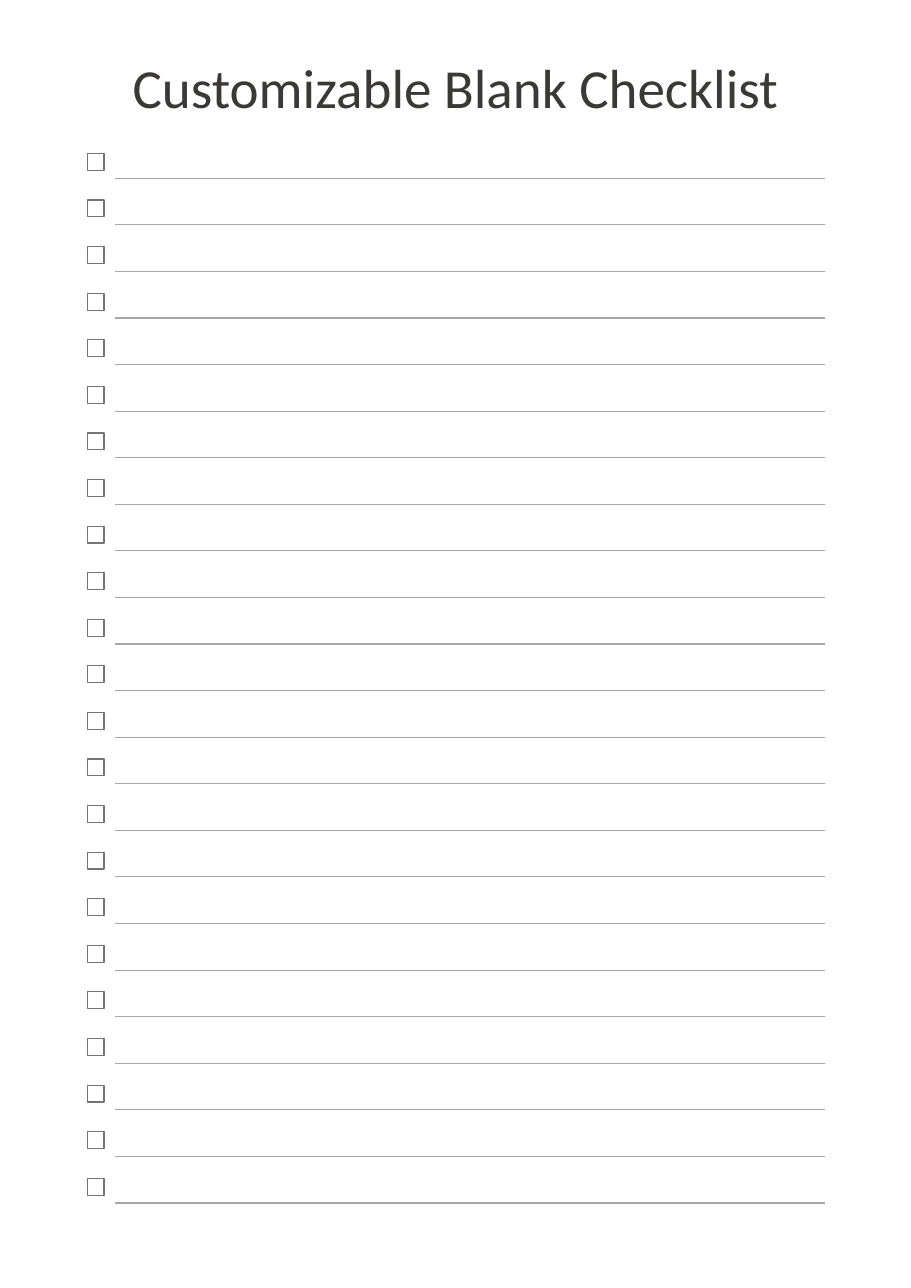
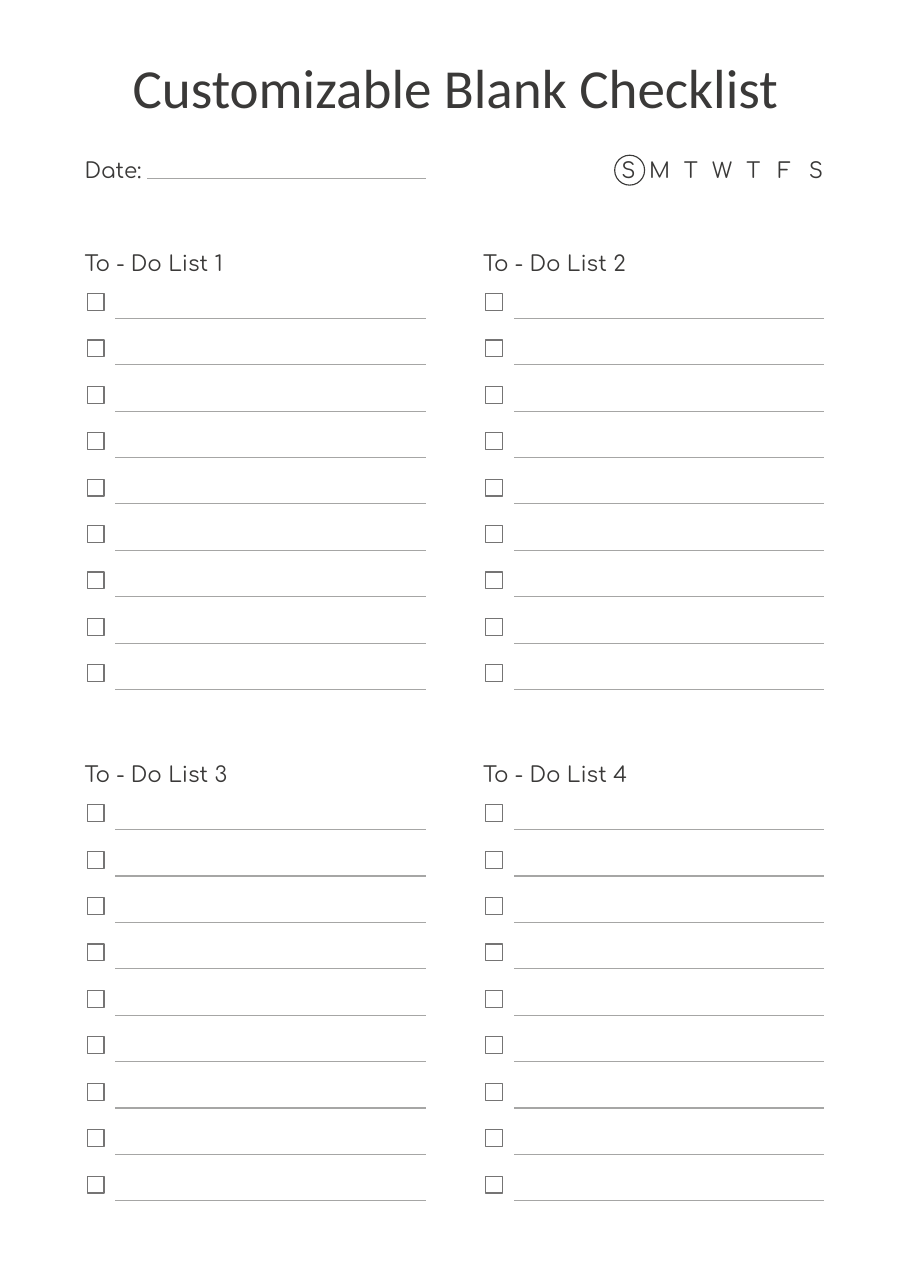
from lxml.etree import SubElement
from pptx import Presentation
from pptx.dml.color import RGBColor
from pptx.enum.shapes import MSO_CONNECTOR as Link, MSO_SHAPE as Form
from pptx.enum.text import MSO_AUTO_SIZE as AutoSize, PP_ALIGN as Align
from pptx.oxml.ns import qn
from pptx.util import Cm, Pt

TITLE = "Customizable Blank Checklist"
DATE_LABEL = "Date:"
WEEKDAYS = ["S", "M", "T", "W", "T", "F", "S"]
TODO_LISTS = [
    ["To - Do List 1", "To - Do List 2"],
    ["To - Do List 3", "To - Do List 4"],
]

COLORS = {"ink": "3A3938", "rule": "A6A6A5", "box": "757474"}
TITLE_STYLE = {"font": "Calibri", "size": 36, "align": Align.CENTER}
LABEL_STYLE = {"font": "Comfortaa", "size": 14, "align": Align.LEFT}
DAY_STYLE = {**LABEL_STYLE, "align": Align.CENTER}

LEFT = 1.95
HEADER_RULE, LABEL_TOP, LABEL_HEIGHT = 4.11, 3.63, 0.61
BOX_SIZE, BOX_INDENT, BOX_RISE, RULE_INDENT = 0.39, 0.06, 0.57, 0.71
PAGE_ROWS, PAGE_LAST_RULE, PAGE_WIDTH = 23, 27.74, 17.07
LIST_ROWS, LIST_PITCH, LIST_WIDTH = 9, 1.07, 7.86
LIST_TOP, COLUMN_STEP, BAND_STEP, FIRST_RULE_DROP = 5.77, 9.19, 11.79, 1.57
DATE_RULE_LEFT = 3.4
DAYS_LEFT, DAY_WIDTH = 14.13, 0.72
MARK_LEFT, MARK_TOP, MARK_SIZE = 14.17, 3.58, 0.69


def add_text(shapes, text, left, top, width, height, style):
    box = shapes.add_textbox(Cm(left), Cm(top), Cm(width), Cm(height))
    frame = box.text_frame
    frame.word_wrap = True
    frame.auto_size = AutoSize.SHAPE_TO_FIT_TEXT
    frame.margin_left = frame.margin_right = frame.margin_top = frame.margin_bottom = 0
    paragraph = frame.paragraphs[0]
    paragraph.alignment = style["align"]
    run = paragraph.add_run()
    run.text = text
    run.font.name = style["font"]
    run.font.size = Pt(style["size"])
    run.font.color.rgb = RGBColor.from_string(COLORS["ink"])


def set_line(line, color):
    line.color.rgb = RGBColor.from_string(COLORS[color])
    line.width = Pt(0.75)


def add_outline(shapes, form, left, top, size, color):
    outline = shapes.add_shape(form, Cm(left), Cm(top), Cm(size), Cm(size))
    outline.shadow.inherit = False
    outline.fill.background()
    set_line(outline.line, color)


def add_rule(shapes, left, right, y):
    rule = shapes.add_connector(Link.STRAIGHT, Cm(left), Cm(y), Cm(right), Cm(y))
    set_line(rule.line, "rule")
    SubElement(rule._element.spPr, qn("a:effectLst"))


def add_rows(shapes, left, width, first_rule, pitch, count):
    for row in range(count):
        y = first_rule + row * pitch
        add_rule(shapes, left + RULE_INDENT, left + width, y)
        add_outline(shapes, Form.RECTANGLE, left + BOX_INDENT, y - BOX_RISE, BOX_SIZE, "box")


def add_page(deck):
    shapes = deck.slides.add_slide(deck.slide_layouts[6]).shapes
    add_text(shapes, TITLE, 1.86, 1.23, 17.28, 1.55, TITLE_STYLE)
    return shapes


def build_single_list(deck):
    rows = add_page(deck).add_group_shape().shapes
    pitch = (PAGE_LAST_RULE - HEADER_RULE) / (PAGE_ROWS - 1)
    add_rows(rows, LEFT, PAGE_WIDTH, HEADER_RULE, pitch, PAGE_ROWS)


def build_four_lists(deck):
    page = add_page(deck)
    add_outline(page, Form.OVAL, MARK_LEFT, MARK_TOP, MARK_SIZE, "ink")

    date = page.add_group_shape().shapes
    add_text(date, DATE_LABEL, LEFT, LABEL_TOP, 1.47, LABEL_HEIGHT, LABEL_STYLE)
    add_rule(date, DATE_RULE_LEFT, LEFT + LIST_WIDTH, HEADER_RULE)

    week = page.add_group_shape().shapes
    for index, day in enumerate(WEEKDAYS):
        add_text(week, day, DAYS_LEFT + index * DAY_WIDTH, LABEL_TOP,
                 DAY_WIDTH, LABEL_HEIGHT, DAY_STYLE)

    for band, headings in enumerate(TODO_LISTS):
        top = LIST_TOP + band * BAND_STEP
        for column, heading in enumerate(headings):
            left = LEFT + column * COLUMN_STEP
            todo = page.add_group_shape().shapes
            add_text(todo, heading, left, top, LIST_WIDTH, LABEL_HEIGHT, LABEL_STYLE)
            add_rows(todo, left, LIST_WIDTH, top + FIRST_RULE_DROP, LIST_PITCH, LIST_ROWS)


def main():
    deck = Presentation()
    deck.slide_width, deck.slide_height = Cm(21), Cm(29.7)
    build_single_list(deck)
    build_four_lists(deck)
    deck.save("out.pptx")


if __name__ == "__main__":
    main()
